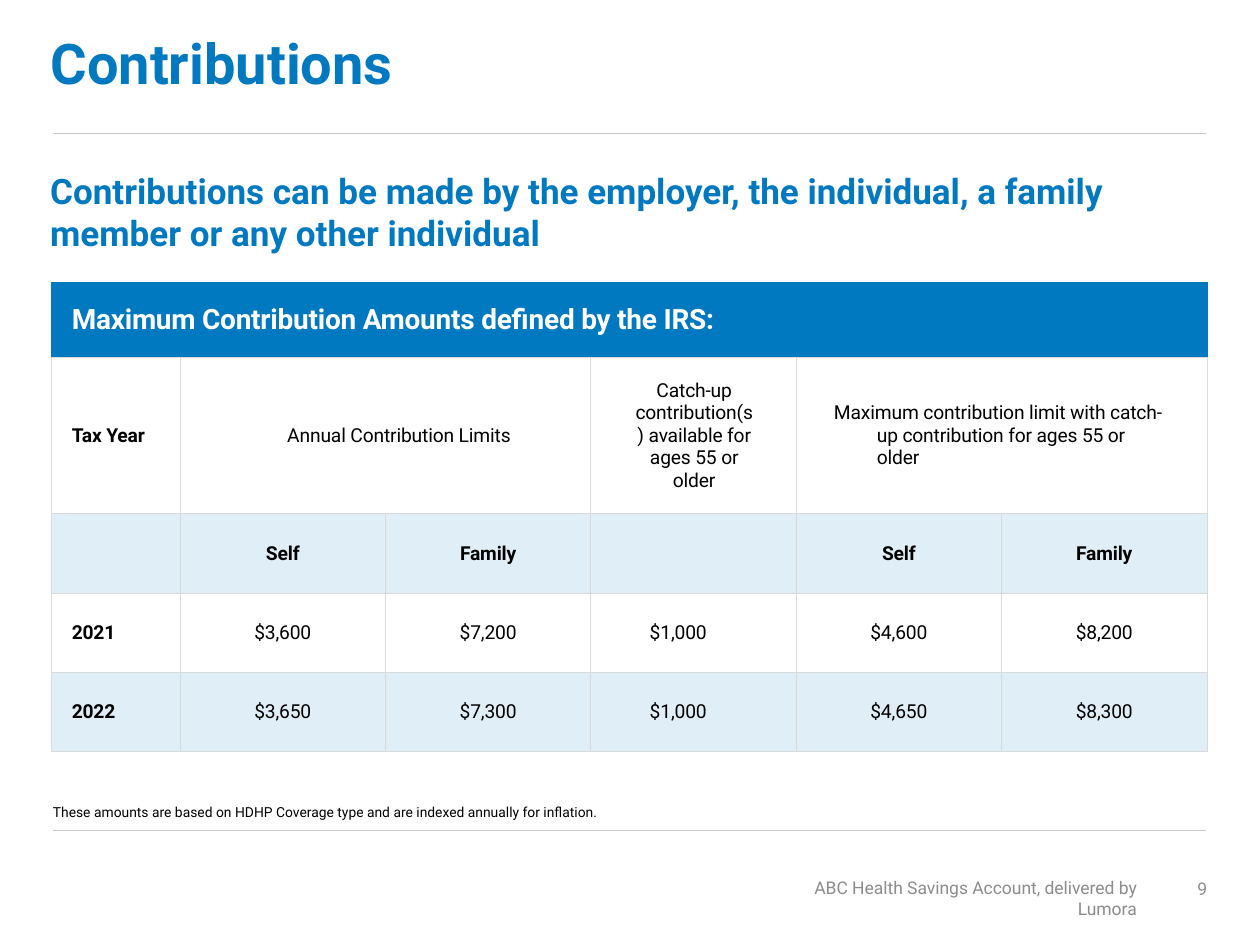
import pptx
import pptx.dml.color
import pptx.enum.shapes
import pptx.enum.text
import pptx.oxml
import pptx.oxml.ns
import pptx.util

FONT = "Roboto"
BLUE, GRAY, RULE, BORDER = "0079C1", "8C8C8C", "C8C8C8", "D9D9D9"
BLACK, WHITE, BAND = "000000", "FFFFFF", "CCE4F3"
LEFT, CENTER, RIGHT = (
    pptx.enum.text.PP_ALIGN.LEFT,
    pptx.enum.text.PP_ALIGN.CENTER,
    pptx.enum.text.PP_ALIGN.RIGHT,
)
MIDDLE = pptx.enum.text.MSO_ANCHOR.MIDDLE
COLUMNS = [1.02] + [1.63] * 5
ROWS = [0.6, 1.2] + [0.63] * 3
CELLS = [
    ["Maximum Contribution Amounts defined by the IRS:", "", "", "", "", ""],
    ["Tax Year", "Annual Contribution Limits", "",
     "Catch-up contribution(s) available for ages 55 or older",
     "Maximum contribution limit with catch-up contribution for ages 55 or older", ""],
    ["", "Self", "Family", "", "Self", "Family"],
    ["2021", "$3,600", "$7,200", "$1,000", "$4,600", "$8,200"],
    ["2022", "$3,650", "$7,300", "$1,000", "$4,650", "$8,300"],
]
MERGES = [(0, 0, 5), (1, 1, 2), (1, 4, 5)]
INDENTS = {
    (1, 1): (0.69, 0, 0),
    (1, 3): (0.19, 0, 0.18),
    (1, 4): (0.48, -0.34, 0.12),
    (3, 3): (0, 0, 0.55),
    (4, 3): (0, 0, 0.55),
}


def color(value):
    """Turn a hex string into a colour."""
    return pptx.dml.color.RGBColor.from_string(value)


def write(frame, text, size, shade, bold=False, align=LEFT):
    """Set one paragraph of text with its format and return it."""
    frame.text = text
    para = frame.paragraphs[0]
    para.alignment = align
    for font in [para.font] + [span.font for span in para.runs]:
        font.name, font.size, font.bold = FONT, pptx.util.Pt(size), bold
        font.color.rgb = color(shade)
    return para


def indent(para, left, first, right):
    """Indent a paragraph by lengths in inches."""
    properties = para._p.get_or_add_pPr()
    for name, length in (("marL", left), ("marR", right), ("indent", first)):
        properties.set(name, str(pptx.util.Inches(length)))


def place(shape, left, top, width, height):
    """Move and size a shape in inches."""
    shape.left, shape.top = pptx.util.Inches(left), pptx.util.Inches(top)
    shape.width, shape.height = pptx.util.Inches(width), pptx.util.Inches(height)


def add_text(slide, area, text, size, shade, **style):
    """Add a wrapping text box."""
    box = slide.shapes.add_textbox(0, 0, 0, 0)
    place(box, *area)
    box.text_frame.word_wrap = True
    write(box.text_frame, text, size, shade, **style)
    return box.text_frame


def add_rule(slide, top):
    """Draw a thin rule across the content width."""
    start, end, height = (pptx.util.Inches(length) for length in (0.42, 9.57, top))
    rule = slide.shapes.add_connector(
        pptx.enum.shapes.MSO_CONNECTOR.STRAIGHT, start, height, end, height)
    rule.line.color.rgb = color(RULE)
    rule.line.width = pptx.util.Pt(0.75)
    rule._element.spPr.append(pptx.oxml.parse_xml(
        f'<a:effectLst {pptx.oxml.ns.nsdecls("a")}/>'))


def set_borders(cell, header):
    """Outline a cell, with only the lower edge grey in the header."""
    for side in "LRTB":
        shade = BLUE if header and side != "B" else BORDER
        cell._tc.get_or_add_tcPr().append(pptx.oxml.parse_xml(
            f'<a:ln{side} {pptx.oxml.ns.nsdecls("a")} w="6350"><a:solidFill>'
            f'<a:srgbClr val="{shade}"/></a:solidFill></a:ln{side}>'))


def set_fill(cell, shade, opacity=100):
    """Fill a cell, with opacity in percent."""
    cell.fill.solid()
    cell.fill.fore_color.rgb = color(shade)
    if opacity < 100:
        tone = cell._tc.tcPr.find(".//" + pptx.oxml.ns.qn("a:solidFill") + "[last()]/..")
        fill = cell._tc.tcPr.find(pptx.oxml.ns.qn("a:solidFill"))
        tone = fill.find(pptx.oxml.ns.qn("a:srgbClr"))
        tone.append(pptx.oxml.parse_xml(
            f'<a:alpha {pptx.oxml.ns.nsdecls("a")} val="{opacity * 1000}"/>'))


def format_cell(cell, row, column):
    """Write and style one cell by its place in the grid."""
    header = row == 0
    cell.margin_left = cell.margin_right = pptx.util.Inches(0.16)
    cell.margin_top = cell.margin_bottom = pptx.util.Inches(0.16)
    cell.vertical_anchor = MIDDLE
    align = CENTER
    if column == 0 or (row == 1 and column != 3):
        align = LEFT
    elif row > 2 and column == 3:
        align = RIGHT
    para = write(cell.text_frame, CELLS[row][column], 16 if header else 11,
                 WHITE if header else BLACK,
                 bold=column == 0 or row == 2, align=align)
    if (row, column) in INDENTS:
        indent(para, *INDENTS[row, column])
    for span in para.runs:
        span.font._element.set("spc", "-10")
    set_borders(cell, header)
    if row in (2, 4):
        set_fill(cell, BAND, 60)
    else:
        set_fill(cell, BLUE if header else WHITE)


def add_limits_table(slide):
    """Add the table of contribution limits."""
    area = [pptx.util.Inches(length) for length in (0.41, 2.24, sum(COLUMNS), sum(ROWS))]
    table = slide.shapes.add_table(len(ROWS), len(COLUMNS), *area).table
    table.first_row = table.horz_banding = False
    for column, width in zip(table.columns, COLUMNS):
        column.width = pptx.util.Inches(width)
    for row, height in zip(table.rows, ROWS):
        row.height = pptx.util.Inches(height)
    for row in range(len(ROWS)):
        for column in range(len(COLUMNS)):
            format_cell(table.cell(row, column), row, column)
    for row, first, last in MERGES:
        table.cell(row, first).merge(table.cell(row, last))


def main():
    """Build the contributions slide."""
    deck = pptx.Presentation()
    deck.slide_width, deck.slide_height = pptx.util.Inches(10), pptx.util.Inches(7.5)
    slide = deck.slides.add_slide(deck.slide_layouts[5])
    title = slide.shapes.title
    place(title, 0.3, 0, 9.28, 1.05)
    title.text_frame.vertical_anchor = MIDDLE
    write(title.text_frame, "Contributions", 32, BLUE, bold=True).line_spacing = 0.9
    for top in (1.06, 6.59):
        add_rule(slide, top)
    add_text(slide, (0.3, 1.3, 8.87, 0.93),
             "Contributions can be made by the employer, the individual, "
             "a family member or any other individual", 20, BLUE, bold=True)
    add_limits_table(slide)
    note = add_text(slide, (0.4, 6.36, 5.46, 0.15),
                    "These amounts are based on HDHP Coverage type and are "
                    "indexed annually for inflation.", 7.9, BLACK)
    note.margin_left = pptx.util.Inches(0.02)
    note.margin_right = note.margin_top = note.margin_bottom = 0
    note.vertical_anchor = pptx.enum.text.MSO_ANCHOR.BOTTOM
    add_text(slide, (6.02, 6.91, 3.1, 0.27),
             "ABC Health Savings Account, delivered by Lumora", 10, GRAY, align=RIGHT)
    number = add_text(slide, (9.12, 6.85, 0.56, 0.4), "9", 10, GRAY, align=RIGHT)
    number.vertical_anchor = MIDDLE
    deck.save("out.pptx")


if __name__ == "__main__":
    main()
